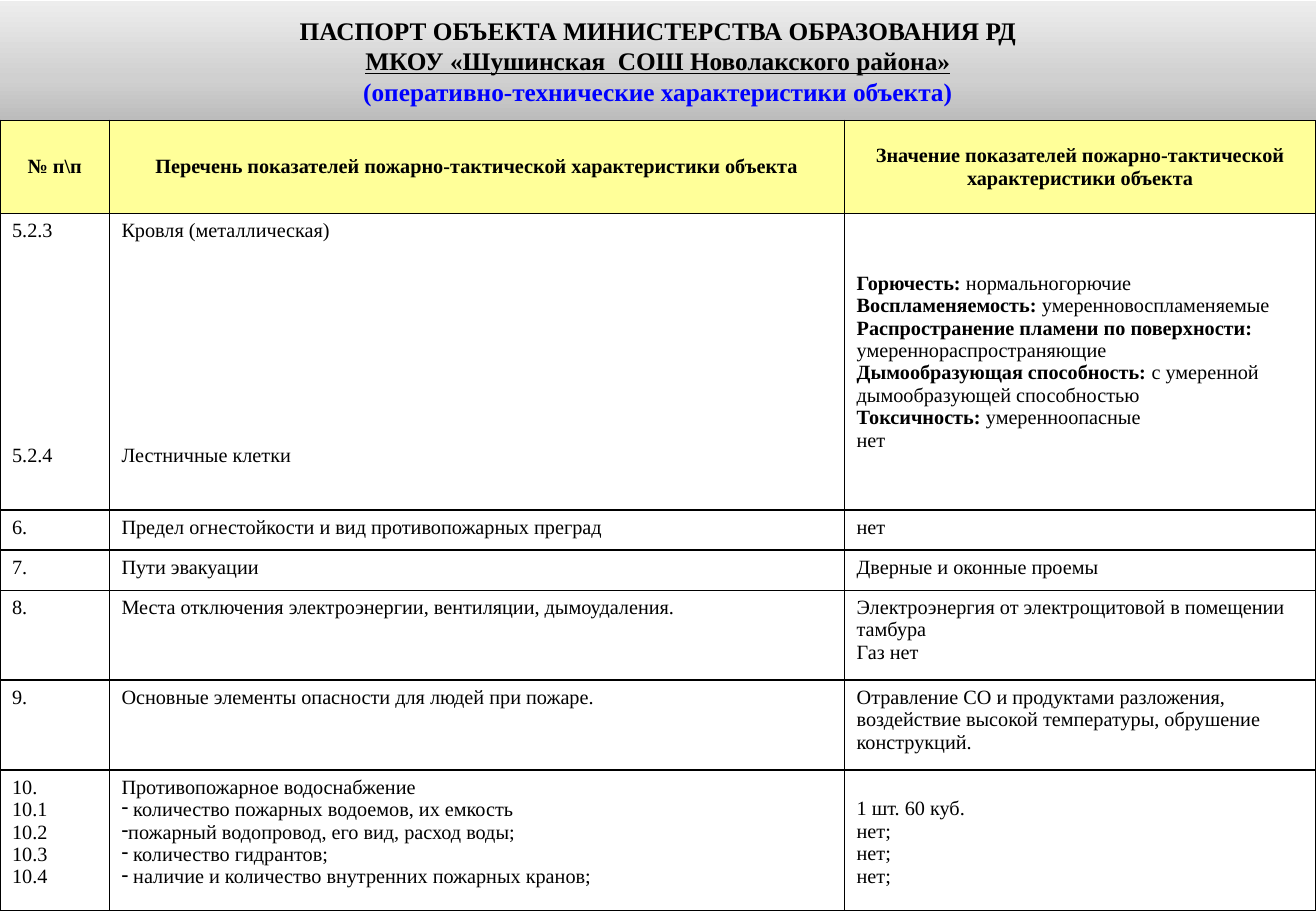
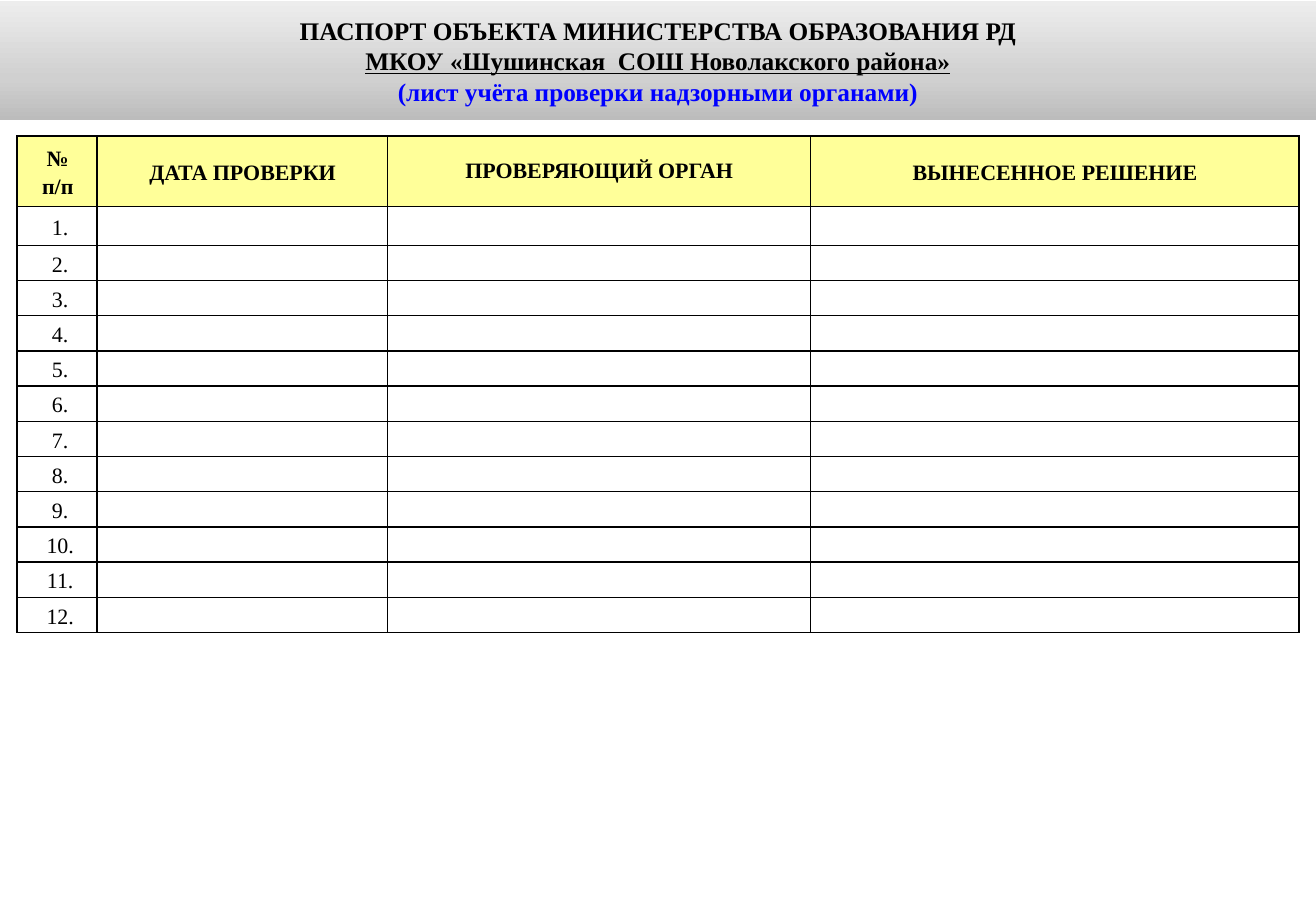
"""Builds two pages of a fire-safety passport for a school."""
from copy import deepcopy
from dataclasses import dataclass

from lxml import etree
from pptx import Presentation
from pptx.dml.color import RGBColor
from pptx.enum.shapes import MSO_SHAPE
from pptx.enum.text import MSO_ANCHOR, PP_ALIGN
from pptx.oxml.ns import qn
from pptx.util import Inches, Pt

RECTANGLE = MSO_SHAPE.RECTANGLE
MIDDLE, TOP = MSO_ANCHOR.MIDDLE, MSO_ANCHOR.TOP
CENTER, LEFT = PP_ALIGN.CENTER, PP_ALIGN.LEFT
UNIT = Inches(0.01)
GRID_COLUMNS, GRID_ROWS = 1083, 750


@dataclass(frozen=True)
class Theme:
    font: str = "Times New Roman"
    ink: str = "000000"
    accent: str = "0000FF"
    header: str = "FFFF99"
    paper: str = "FFFFFF"
    band: tuple = ((0, "BCBCBC"), (0.35, "D0D0D0"), (1, "EDEDED"))
    title_size: int = 15
    body_size: int = 12
    log_size: int = 13
    border: int = 1


def apply(target, values):
    for name, value in values.items():
        setattr(target, name, value)


def margins(side, edge, top=None):
    return {"margin_left": side * UNIT, "margin_right": side * UNIT,
            "margin_top": (edge if top is None else top) * UNIT,
            "margin_bottom": edge * UNIT}


class Passport:
    def __init__(self, theme):
        self.theme = theme
        self.deck = Presentation()
        apply(self.deck, {"slide_width": GRID_COLUMNS * UNIT,
                          "slide_height": GRID_ROWS * UNIT})
        self.page = None

    def new_page(self):
        self.page = self.deck.slides.add_slide(self.deck.slide_layouts[6])

    def span(self, para, text, size, color=None, **style):
        span = para.add_run()
        span.text = text
        apply(span.font, {"name": self.theme.font, "size": Pt(size), **style})
        span.font.color.rgb = RGBColor.from_string(color or self.theme.ink)

    def band(self, subtitle):
        box = self.page.shapes.add_shape(
            RECTANGLE, 0, UNIT, GRID_COLUMNS * UNIT, 98 * UNIT)
        box.shadow.inherit = False
        box.line.fill.background()
        box.fill.gradient()
        box.fill.gradient_angle = 90
        stops = box._element.spPr.find(qn("a:gradFill")).find(qn("a:gsLst"))
        stops.append(deepcopy(stops[0]))
        for stop, (position, color) in zip(box.fill.gradient_stops, self.theme.band):
            stop.position = position
            stop.color.rgb = RGBColor.from_string(color)
        frame = box.text_frame
        apply(frame, {"word_wrap": True, "vertical_anchor": MIDDLE, **margins(9, 5)})
        lines = (
            ("ПАСПОРТ ОБЪЕКТА МИНИСТЕРСТВА ОБРАЗОВАНИЯ РД", self.theme.ink, False),
            ("МКОУ «Шушинская  СОШ Новолакского района»", self.theme.ink, True),
            (subtitle, self.theme.accent, False),
        )
        for index, (text, color, underline) in enumerate(lines):
            para = frame.add_paragraph() if index else frame.paragraphs[0]
            para.alignment = CENTER
            self.span(para, text, self.theme.title_size, color,
                      bold=True, underline=underline)

    def table(self, left, top, widths, heights):
        table = self.page.shapes.add_table(
            len(heights), len(widths), left * UNIT, top * UNIT,
            sum(widths) * UNIT, sum(heights) * UNIT).table
        apply(table, {"first_row": False, "horz_banding": False})
        for column, width in zip(table.columns, widths):
            column.width = width * UNIT
        for row, height in zip(table.rows, heights):
            row.height = height * UNIT
        return table

    def border(self, cell):
        properties = cell._tc.get_or_add_tcPr()
        for side in ("lnL", "lnR", "lnT", "lnB"):
            line = etree.SubElement(properties, qn("a:" + side),
                                    w=str(Pt(self.theme.border)))
            fill = etree.SubElement(line, qn("a:solidFill"))
            etree.SubElement(fill, qn("a:srgbClr"), val=self.theme.ink)

    def cell(self, cell, paras, size, cell_format, para_format, header=False, indent=0):
        self.border(cell)
        cell.fill.solid()
        cell.fill.fore_color.rgb = RGBColor.from_string(
            self.theme.header if header else self.theme.paper)
        apply(cell, cell_format)
        frame = cell.text_frame
        for index, content in enumerate(paras):
            para = frame.add_paragraph() if index else frame.paragraphs[0]
            apply(para, para_format)
            label, text = content if isinstance(content, tuple) else ("", content)
            properties = para._p.get_or_add_pPr()
            properties.set("marL", str(indent * UNIT))
            properties.set("indent", "0")
            if text.startswith("-"):
                etree.SubElement(properties, qn("a:buChar"), char="-")
                text = text[1:]
            for part, bold in ((label, True), (text, header)):
                if part:
                    self.span(para, part, size, bold=bold)
            if not (label or text):
                etree.SubElement(para._p, qn("a:endParaRPr"), sz=str(size * 100))


FEATURES = (
    (["№ п\\п"],
     ["Перечень показателей пожарно-тактической характеристики объекта"],
     ["Значение показателей пожарно-тактической характеристики объекта"]),
    (["5.2.3", "5.2.4"],
     ["Кровля (металлическая)", "Лестничные клетки"],
     [("Горючесть: ", "нормальногорючие"),
      ("Воспламеняемость: ", "умеренновоспламеняемые"),
      ("Распространение пламени по поверхности:", ""),
      "умереннораспространяющие",
      ("Дымообразующая способность: ", "с умеренной дымообразующей способностью"),
      ("Токсичность: ", "умеренноопасные"),
      "нет"]),
    (["6."], ["Предел огнестойкости и вид противопожарных преград"], ["нет"]),
    (["7."], ["Пути эвакуации"], ["Дверные и оконные проемы"]),
    (["8."], ["Места отключения электроэнергии, вентиляции, дымоудаления."],
     ["Электроэнергия от электрощитовой в помещении тамбура", "Газ нет"]),
    (["9."], ["Основные элементы опасности для людей при пожаре."],
     ["Отравление СО и продуктами разложения, воздействие высокой температуры, "
      "обрушение конструкций."]),
    (["10.", "10.1", "10.2", "10.3", "10.4"],
     ["Противопожарное водоснабжение",
      "- количество пожарных водоемов, их емкость",
      "-пожарный водопровод, его вид, расход воды;",
      "- количество гидрантов;",
      "- наличие и количество внутренних пожарных кранов;"],
     ["1 шт. 60 куб.", "нет;", "нет;", "нет;"]),
)
LOG_HEADER = (["№", "п/п"], ["ДАТА ПРОВЕРКИ"], ["ПРОВЕРЯЮЩИЙ ОРГАН"],
              ["ВЫНЕСЕННОЕ РЕШЕНИЕ"])
CHECKS = 12


def features_page(passport):
    passport.new_page()
    passport.band("(оперативно-технические характеристики объекта)")
    table = passport.table(0, 99, (90, 605, 388), (77, 244, 33, 33, 74, 74, 116))
    last_row, value_column = len(FEATURES) - 1, 2
    for row, contents in enumerate(FEATURES):
        for column, paras in enumerate(contents):
            header = row == 0
            centered = header or (row, column) == (1, value_column)
            lowered = (row, column) == (last_row, value_column)
            cell = table.cell(row, column)
            passport.cell(
                cell, paras, passport.theme.body_size,
                {"vertical_anchor": MIDDLE if centered else TOP,
                 **margins(10, 5, 23 if lowered else 5)},
                {"alignment": CENTER if header else LEFT}, header)
            if row == 1 and column < value_column:
                cell.text_frame.paragraphs[1].space_before = Pt(120)


def checks_page(passport):
    passport.new_page()
    table = passport.table(14, 112, (66, 239, 348, 402),
                           (58, 32) + (29,) * (CHECKS - 1))
    rows = [LOG_HEADER] + [([f"{number}."], [""], [""], [""])
                           for number in range(1, CHECKS + 1)]
    for row, contents in enumerate(rows):
        for column, paras in enumerate(contents):
            header = row == 0
            indent = 0 if column else 1 if header else 5
            spacing = Pt(14) if header and column == 2 else 1.15
            passport.cell(
                table.cell(row, column), paras, passport.theme.log_size,
                {"vertical_anchor": MIDDLE, **margins(3, 0)},
                {"alignment": CENTER, "line_spacing": spacing}, header, indent)
    passport.band("(лист учёта проверки надзорными органами)")


def main():
    passport = Passport(Theme())
    features_page(passport)
    checks_page(passport)
    passport.deck.save("out.pptx")


if __name__ == "__main__":
    main()
